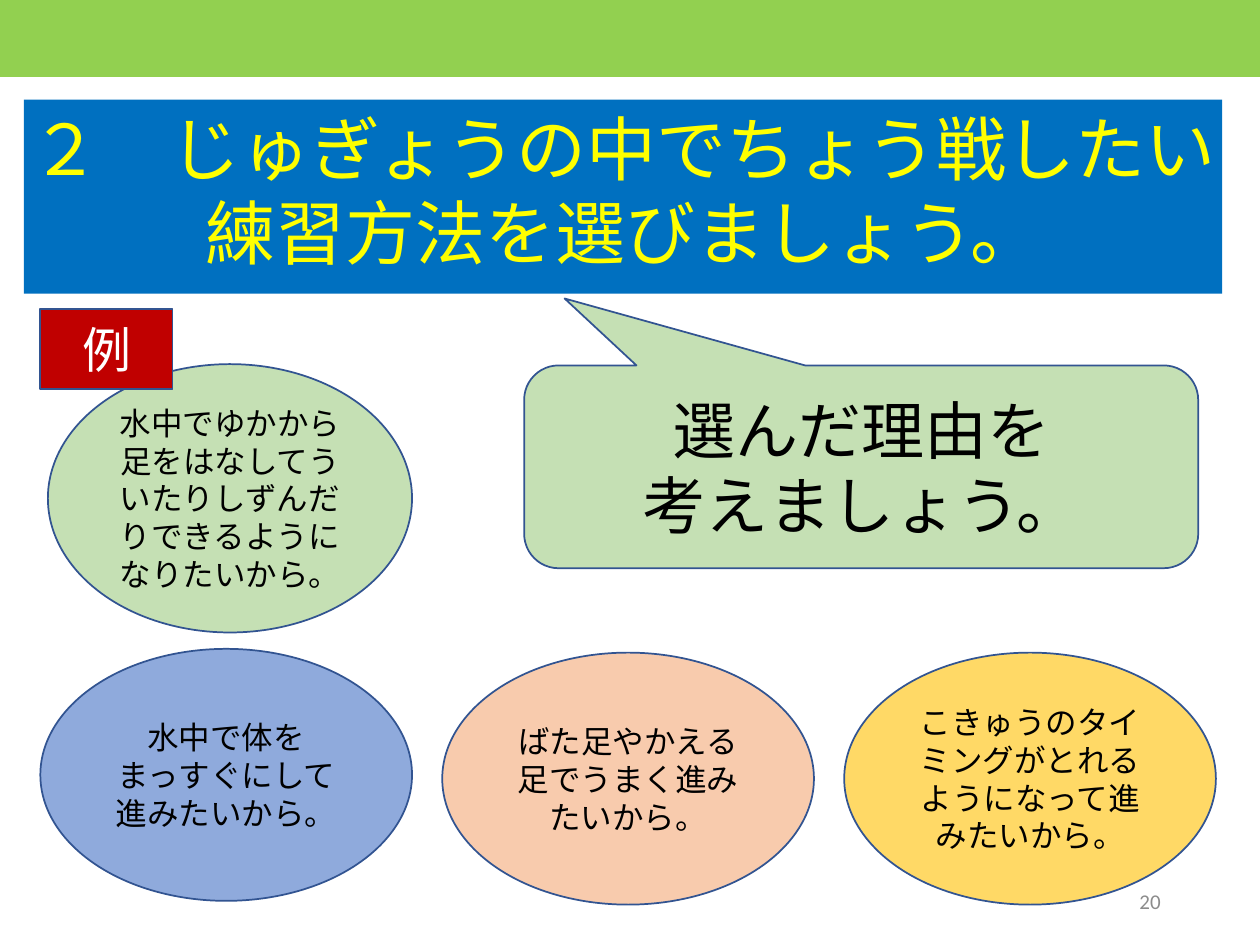
from dataclasses import dataclass

from pptx import Presentation
from pptx import util as u
from pptx.dml.color import RGBColor
from pptx.enum import shapes, text


@dataclass(frozen=True)
class Theme:
    latin: str = "Calibri"
    japanese: str = "Noto Sans CJK JP"
    band: str = "92D050"
    title_fill: str = "0070C0"
    title_text: str = "FFFF00"
    tag: str = "C00000"
    green: str = "C5E0B4"
    blue: str = "8FAADC"
    peach: str = "F8CBAD"
    yellow: str = "FFD966"
    outline: str = "325491"
    black: str = "000000"
    white: str = "FFFFFF"
    grey: str = "8C8C8C"
    title_size: int = 40
    prompt_size: int = 36
    tag_size: int = 28
    reason_size: int = 18
    number_size: int = 12


THEME = Theme()
SHAPE = shapes.MSO_SHAPE
ALIGN = text.PP_ALIGN
ANCHOR = text.MSO_ANCHOR


def rgb(value):
    return RGBColor.from_string(value)


def write(sp, lines, size, color=THEME.black, font=THEME.latin,
          align=ALIGN.CENTER, **frame):
    tf = sp.text_frame
    frame_format = {"word_wrap": True, "vertical_anchor": ANCHOR.MIDDLE, **frame}
    for name, value in frame_format.items():
        setattr(tf, name, value)
    for i, line in enumerate(lines):
        p = tf.add_paragraph() if i else tf.paragraphs[0]
        p.alignment = align
        r = p.add_run()
        r.text = line
        for name, value in {"name": font, "size": u.Pt(size)}.items():
            setattr(r.font, name, value)
        r.font.color.rgb = rgb(color)


def add_box(s, kind, box, fill, outlined=True):
    sp = s.shapes.add_shape(kind, *map(u.Inches, box))
    sp.shadow.inherit = False
    sp.fill.solid()
    sp.fill.fore_color.rgb = rgb(fill)
    if outlined:
        sp.line.color.rgb = rgb(THEME.outline)
        sp.line.width = u.Pt(1)
    else:
        sp.line.fill.background()
    return sp


def add_reason(s, box, fill, lines):
    sp = add_box(s, SHAPE.OVAL, box, fill)
    write(sp, lines, THEME.reason_size)


def add_callout(s, box, lines):
    sp = add_box(s, SHAPE.ROUNDED_RECTANGULAR_CALLOUT, box, THEME.green)
    for i, value in enumerate((-0.44, -0.83, 0.17)):
        sp.adjustments[i] = value
    write(sp, lines, THEME.prompt_size)


def add_title(s, box, lines):
    sp = add_box(s, SHAPE.RECTANGLE, box, THEME.title_fill, outlined=False)
    write(sp, lines, THEME.title_size, THEME.title_text, THEME.japanese,
          vertical_anchor=ANCHOR.TOP,
          margin_left=u.Inches(0.02), margin_right=u.Inches(0.02))


def add_tag(s, box, label):
    sp = add_box(s, SHAPE.RECTANGLE, box, THEME.tag)
    write(sp, [label], THEME.tag_size, THEME.white, THEME.japanese)


def add_slide_number(s, box, number):
    sp = s.shapes.add_textbox(*map(u.Inches, box))
    write(sp, [number], THEME.number_size, THEME.grey, align=ALIGN.RIGHT)


def main():
    prs = Presentation()
    prs.slide_width, prs.slide_height = u.Inches(10), u.Inches(7.5)
    s = prs.slides.add_slide(prs.slide_layouts[6])

    add_box(s, SHAPE.RECTANGLE, (-0.02, 0, 10.02, 0.61), THEME.band, outlined=False)
    add_slide_number(s, (7.06, 6.95, 2.25, 0.4), "20")
    add_callout(s, (4.16, 2.9, 5.35, 1.61), ["選んだ理由を", "考えましょう。"])

    bottom_reasons = [
        (5.15, THEME.blue, ["水中で体を", "まっすぐにして進みたいから。"]),
        (5.18, THEME.peach, ["ばた足やかえる足でうまく進みたいから。"]),
        (5.18, THEME.yellow, ["こきゅうのタイミングがとれるようになって進みたいから。"]),
    ]
    for i, (top, fill, lines) in enumerate(bottom_reasons):
        add_reason(s, (0.32 + 3.19 * i, top, 2.95, 2), fill, lines)
    add_reason(s, (0.38, 2.89, 2.89, 2.13), THEME.green,
               ["水中でゆかから足をはなしてういたりしずんだりできるようになりたいから。"])

    add_title(s, (0.19, 0.79, 9.51, 1.54),
              ["２　じゅぎょうの中でちょう戦したい", "練習方法を選びましょう。"])
    add_tag(s, (0.32, 2.45, 1.05, 0.64), "例")
    prs.save("out.pptx")


if __name__ == "__main__":
    main()
